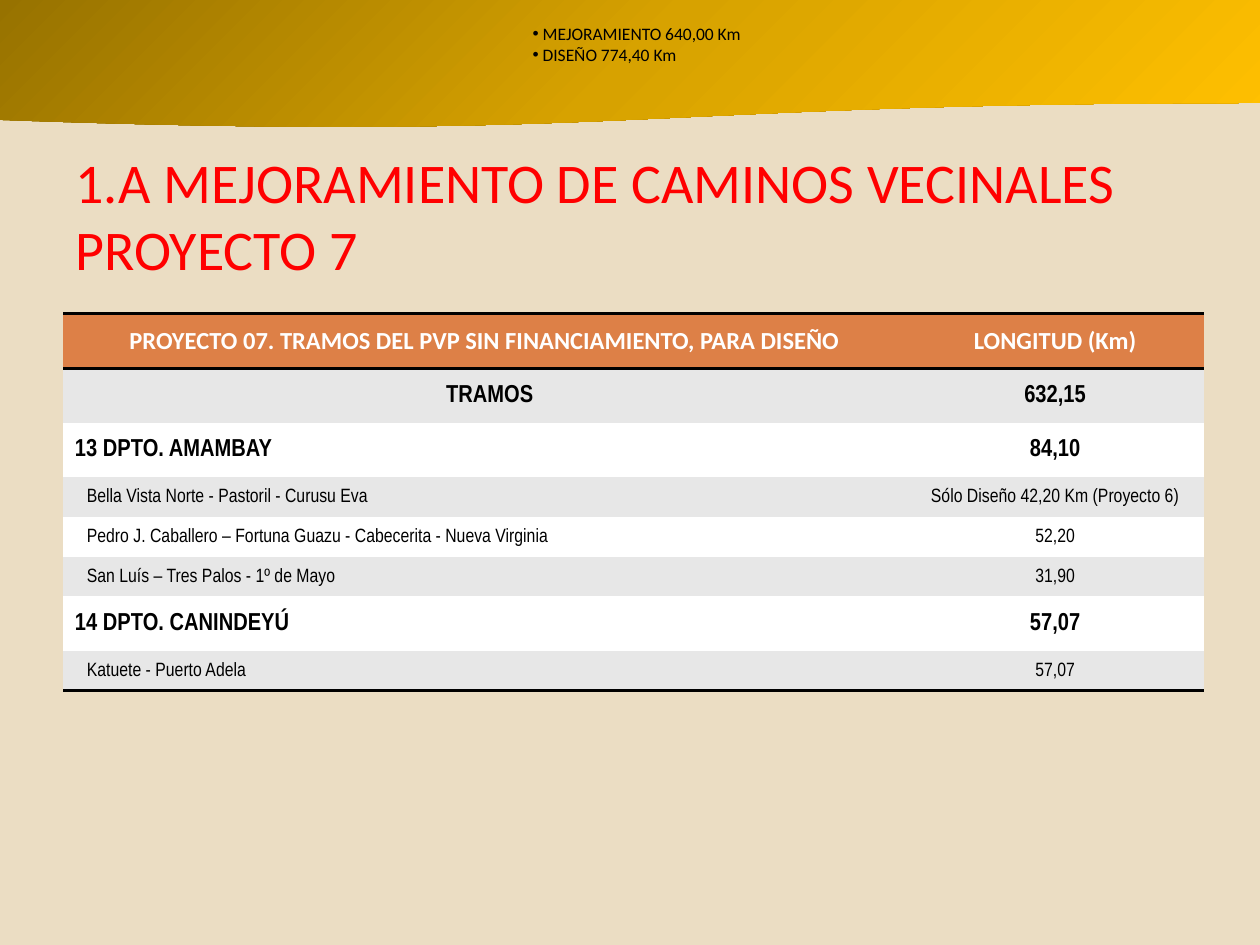
from copy import deepcopy

from lxml.etree import SubElement
from pptx import Presentation
from pptx.dml.color import RGBColor
from pptx.enum.shapes import MSO_SHAPE as Shape
from pptx.enum.text import MSO_ANCHOR as Anchor, PP_ALIGN as Align
from pptx.oxml.ns import qn
from pptx.util import Cm, Pt

BLACK, WHITE, GRAY, ORANGE = "000000", "FFFFFF", "E7E7E7", "DD8047"
PLAIN_STYLE = "{2D5ABB26-0587-4C30-8999-92F81FD0307C}"
BODY_FONT, TABLE_FONT = "Calibri", "Arial Narrow"
ROWS = [
    ("header", "PROYECTO 07. TRAMOS DEL PVP SIN FINANCIAMIENTO, PARA DISEÑO", "LONGITUD (Km)"),
    ("total", "TRAMOS", "632,15"),
    ("group", "13 DPTO. AMAMBAY", "84,10"),
    ("road", "Bella Vista Norte - Pastoril - Curusu Eva", "Sólo Diseño 42,20 Km (Proyecto 6)"),
    ("road", "Pedro J. Caballero – Fortuna Guazu - Cabecerita - Nueva Virginia", "52,20"),
    ("road", "San Luís – Tres Palos - 1º de Mayo", "31,90"),
    ("group", "14 DPTO. CANINDEYÚ", "57,07"),
    ("road", "Katuete - Puerto Adela", "57,07"),
]
LEFT_MARGINS = {"header": 0.03, "total": 0.24, "group": 0.24, "road": 0.48}


def color(value):
    """Turn a hex string into a colour."""
    return RGBColor.from_string(value)


def style_font(para, name, size, tint, bold=False):
    """Set the font of a whole paragraph."""
    font = para.font
    font.name, font.size, font.bold = name, Pt(size), bold
    font.color.rgb = color(tint)


def add_banner(page):
    """Draw the wavy gradient band along the top edge."""
    banner = page.shapes.add_shape(Shape.FLOWCHART_DOCUMENT, 0, 0, Cm(25.4), Cm(2.59))
    banner.shadow.inherit = False
    banner.line.fill.background()
    banner.fill.gradient()
    banner.fill.gradient_angle = 315
    stops = banner._element.spPr.find(".//" + qn("a:gsLst"))
    stops.insert(1, deepcopy(stops[0]))
    shades = [(0, "977200"), (0.5, "D7A200"), (1, "FFC000")]
    for stop, (position, shade) in zip(banner.fill.gradient_stops, shades):
        stop.position = position
        stop.color.rgb = color(shade)


def add_text_box(page, left, top, width, height, anchor=Anchor.TOP):
    """Add a wrapping text box and return its text frame."""
    frame = page.shapes.add_textbox(Cm(left), Cm(top), Cm(width), Cm(height)).text_frame
    frame.word_wrap = True
    frame.vertical_anchor = anchor
    return frame


def add_title(page):
    """Write the two-line slide title."""
    frame = add_text_box(page, 1.27, 2.74, 22.86, 3.18, Anchor.MIDDLE)
    frame.text = "1.A MEJORAMIENTO DE CAMINOS VECINALES \vPROYECTO 7"
    style_font(frame.paragraphs[0], BODY_FONT, 32, "FF0000")


def add_summary(page, lines):
    """Write the bulleted totals on the banner."""
    frame = add_text_box(page, 10.49, 0.33, 8.61, 1.12)
    frame.text = "\n".join(lines)
    for para in frame.paragraphs:
        properties = para._p.get_or_add_pPr()
        properties.set("marL", str(Cm(0.2)))
        properties.set("indent", str(-Cm(0.2)))
        SubElement(properties, qn("a:buFont")).set("typeface", "Arial")
        SubElement(properties, qn("a:buChar")).set("char", "•")
        style_font(para, BODY_FONT, 10, BLACK)


def add_border(cell, side):
    """Draw a black rule on one side of a cell."""
    line = SubElement(cell._tc.get_or_add_tcPr(), qn(f"a:ln{side}"), w=str(Pt(2)))
    fill = SubElement(line, qn("a:solidFill"))
    SubElement(fill, qn("a:srgbClr"), val=BLACK)


def fill_cell(cell, text, kind, shade, sides, is_label):
    """Write and style one table cell."""
    for side in sides:
        add_border(cell, side)
    cell.fill.solid()
    cell.fill.fore_color.rgb = color(shade)
    cell.margin_left = Cm(LEFT_MARGINS[kind] if is_label else 0.03)
    cell.margin_right = cell.margin_top = Cm(0.03)
    cell.margin_bottom = 0
    cell.vertical_anchor = Anchor.MIDDLE
    cell.text = text
    para = cell.text_frame.paragraphs[0]
    para.alignment = Align.LEFT if is_label and kind in ("group", "road") else Align.CENTER
    is_header, is_road = kind == "header", kind == "road"
    style_font(para, BODY_FONT if is_header else TABLE_FONT, 11 if is_road else 14,
               WHITE if is_header else BLACK, not is_road)


def add_road_table(page):
    """Build the table of road sections and lengths."""
    table_frame = page.shapes.add_table(len(ROWS), 2, Cm(1.27), Cm(6.32), Cm(23), Cm(7.6))
    table = table_frame.table
    table.horz_banding = False
    table._tbl.tblPr.find(qn("a:tableStyleId")).text = PLAIN_STYLE
    for column, width in zip(table.columns, (17, 6)):
        column.width = Cm(width)
    for index, (kind, *texts) in enumerate(ROWS):
        table.rows[index].height = Cm(0.8 if kind == "road" else 1.1)
        shade = ORANGE if kind == "header" else (WHITE, GRAY)[index % 2]
        sides = "TB" if kind == "header" else "B" if index == len(ROWS) - 1 else ""
        for position, text in enumerate(texts):
            fill_cell(table.cell(index, position), text, kind, shade, sides, position == 0)


def main():
    """Build and save the slide."""
    deck = Presentation()
    deck.slide_width, deck.slide_height = Cm(25.4), Cm(19.05)
    page = deck.slides.add_slide(deck.slide_layouts[6])
    page.background.fill.solid()
    page.background.fill.fore_color.rgb = color("EBDDC3")
    add_banner(page)
    add_title(page)
    add_road_table(page)
    add_summary(page, ["MEJORAMIENTO 640,00 Km", "DISEÑO 774,40 Km"])
    deck.save("out.pptx")


if __name__ == "__main__":
    main()
